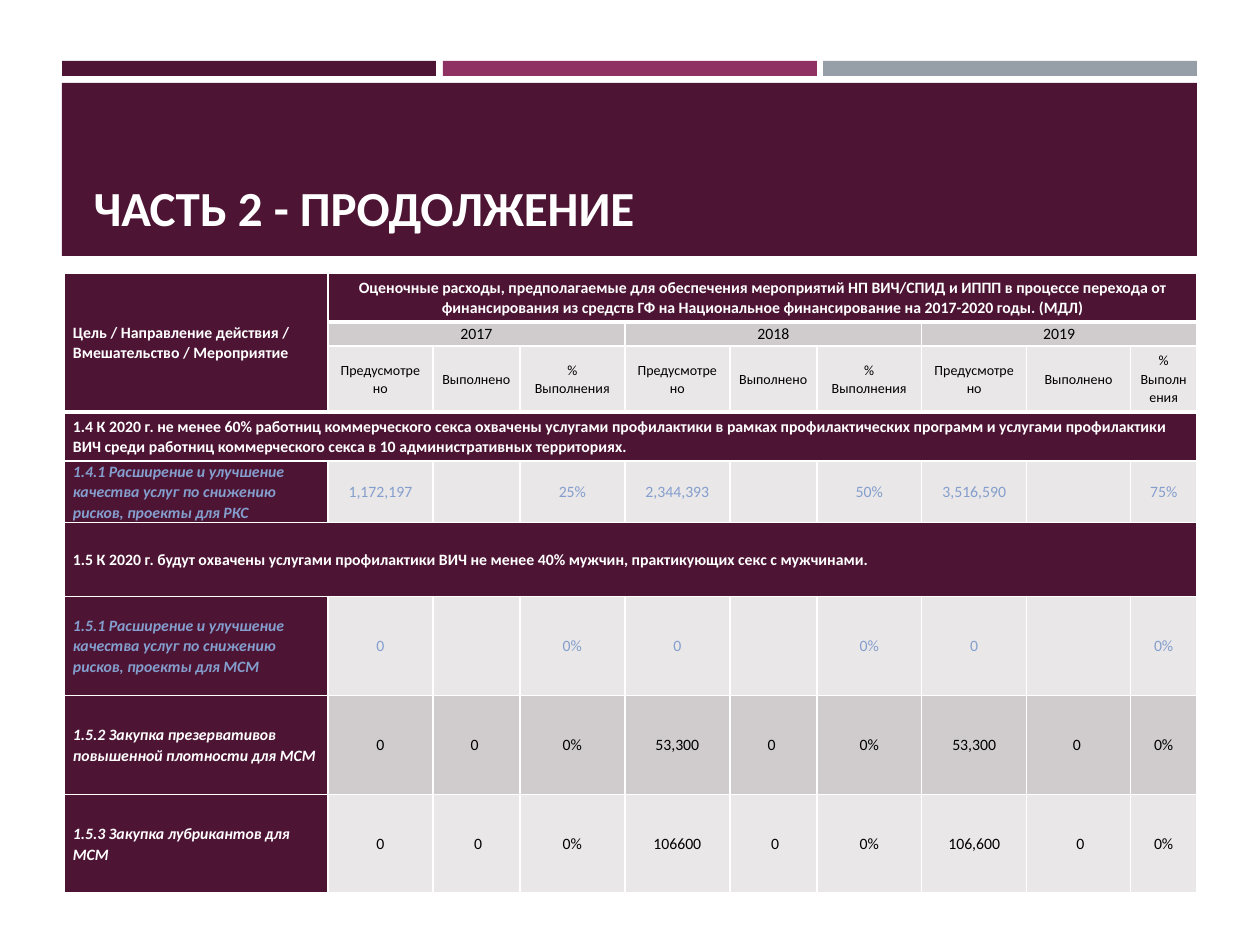
from lxml import etree
from pptx import Presentation
from pptx import util as u
from pptx.dml.color import RGBColor
from pptx.enum import shapes, text
from pptx.oxml import ns

PX = u.Inches(1) / 126
FONT = "Calibri"
PLUM = RGBColor(0x4D, 0x14, 0x34)
MAGENTA = RGBColor(0x90, 0x31, 0x63)
STEEL = RGBColor(0x96, 0x9F, 0xA7)
WHITE = RGBColor(0xFF, 0xFF, 0xFF)
BLACK = RGBColor(0, 0, 0)
BLUE = RGBColor(0x84, 0x9E, 0xCD)
GREY = RGBColor(0xD0, 0xCC, 0xCE)
PALE = RGBColor(0xE9, 0xE7, 0xE8)


def px(*lengths):
    """Turn pixel lengths into a list of EMU lengths."""
    return [u.Emu(round(length * PX)) for length in lengths]


def style_cell(cell, words, fill, color, size=9, bold=False, italic=False,
               centred=True, bottom=1):
    """Write and format one cell; bottom is its lower border in points."""
    cell.text = words
    cell.vertical_anchor = text.MSO_ANCHOR.MIDDLE
    cell.margin_left, cell.margin_right = px(9, 9)
    cell.margin_top = cell.margin_bottom = 0
    para = cell.text_frame.paragraphs[0]
    para.alignment = text.PP_ALIGN.CENTER if centred else text.PP_ALIGN.LEFT
    para.line_spacing = 1.07
    para.font.name, para.font.size = FONT, u.Pt(size)
    para.font.bold, para.font.italic = bold, italic
    para.font.color.rgb = color

    props = cell._tc.get_or_add_tcPr()
    for side, width in (("lnL", 1), ("lnR", 1), ("lnT", 1), ("lnB", bottom)):
        line = etree.SubElement(props, ns.qn(f"a:{side}"), w=str(u.Pt(width)))
        solid = etree.SubElement(line, ns.qn("a:solidFill"))
        etree.SubElement(solid, ns.qn("a:srgbClr"), val=str(WHITE))
    cell.fill.solid()
    cell.fill.fore_color.rgb = fill


deck = Presentation()
deck.slide_width, deck.slide_height = px(1260, 945)
page = deck.slides.add_slide(deck.slide_layouts[5])

# Bars and title band
for left, top, width, height, color in (
    (62, 61, 374, 15, PLUM),
    (443, 61, 374, 15, MAGENTA),
    (823, 61, 374, 15, STEEL),
    (62, 83, 1135, 173, PLUM),
):
    bar = page.shapes.add_shape(shapes.MSO_SHAPE.RECTANGLE, *px(left, top, width, height))
    bar.shadow.inherit = False
    bar.fill.solid()
    bar.fill.fore_color.rgb = color
    bar.line.fill.background()

title = page.shapes.title
title.element.getparent().append(title.element)  # in front of the band
title.left, title.top, title.width, title.height = px(81, 95, 1101, 148)
title.text_frame.text = "ЧАСТЬ 2 - ПРОДОЛЖЕНИЕ"
title.text_frame.auto_size = text.MSO_AUTO_SIZE.NONE
title.text_frame.vertical_anchor = text.MSO_ANCHOR.BOTTOM
para = title.text_frame.paragraphs[0]
para.alignment = text.PP_ALIGN.LEFT
para.font.name, para.font.size, para.font.bold = FONT, u.Pt(28), True
para.font.color.rgb = WHITE

# Table grid
column_widths = px(264, 105, 87, 105, 105, 87, 105, 105, 104, 66)
row_heights = px(49, 24, 66, 49, 58, 74, 99, 99, 99)
frame = page.shapes.add_table(len(row_heights), len(column_widths), *px(64, 273, 1133, 617))
table = frame.table
table.first_row = table.horz_banding = False
for column, width in zip(table.columns, column_widths):
    column.width = width
for row, height in zip(table.rows, row_heights):
    row.height = height

# Header
cost_heading = (
    "Оценочные расходы, предполагаемые для обеспечения мероприятий НП ВИЧ/СПИД и ИППП "
    "в процессе перехода от финансирования из средств ГФ на Национальное финансирование "
    "на 2017-2020 годы. (МДЛ)"
)
measures = ["Предусмотрено", "Выполнено", "% Выполнения"]
for row in range(3):
    words = "Цель / Направление действия / Вмешательство / Мероприятие" if row == 0 else ""
    style_cell(table.cell(row, 0), words, PLUM, WHITE, bold=True, centred=False, bottom=3)
for col in range(1, 10):
    year, measure = divmod(col - 1, 3)
    style_cell(table.cell(0, col), cost_heading if col == 1 else "", PLUM, WHITE,
               bold=True, bottom=3)
    style_cell(table.cell(1, col), str(2017 + year) if measure == 0 else "", GREY, BLACK)
    style_cell(table.cell(2, col), measures[measure], PALE, BLACK, size=8, bottom=3)
table.cell(0, 0).merge(table.cell(2, 0))
table.cell(0, 1).merge(table.cell(0, 9))
for col in (1, 4, 7):
    table.cell(1, col).merge(table.cell(1, col + 2))

# Goals across the full width
goals = {
    3: "1.4 К 2020 г. не менее 60% работниц коммерческого секса охвачены услугами "
       "профилактики в рамках профилактических программ и услугами профилактики ВИЧ среди "
       "работниц коммерческого секса в 10 административных территориях.",
    5: "1.5 К 2020 г. будут охвачены услугами профилактики ВИЧ не менее 40% мужчин, "
       "практикующих секс с мужчинами.",
}
for row, goal in goals.items():
    for col in range(10):
        style_cell(table.cell(row, col), goal if col == 0 else "", PLUM, WHITE,
                   bold=True, centred=False)
    table.cell(row, 0).merge(table.cell(row, 9))

# Activities: row, label, label colour, value colour, fill, values
activities = [
    (4, "1.4.1 Расширение и улучшение качества услуг по снижению рисков, проекты для РКС",
     BLUE, BLUE, PALE,
     ["1,172,197", "", "25%", "2,344,393", "", "50%", "3,516,590", "", "75%"]),
    (6, "1.5.1 Расширение и улучшение качества услуг по снижению рисков, проекты для МСМ",
     BLUE, BLUE, PALE, ["0", "", "0%"] * 3),
    (7, "1.5.2 Закупка презервативов повышенной плотности для МСМ",
     WHITE, BLACK, GREY,
     ["0", "0 ", "0%", "53,300", "0 ", "0%", "53,300", "0 ", "0%"]),
    (8, "1.5.3 Закупка лубрикантов для МСМ",
     WHITE, BLACK, PALE,
     ["0", " 0", "0%", "106600", " 0", "0%", "106,600", " 0", "0%"]),
]
for row, label, label_color, value_color, fill, values in activities:
    style_cell(table.cell(row, 0), label, PLUM, label_color, bold=True, italic=True,
               centred=False)
    for col, value in enumerate(values, start=1):
        style_cell(table.cell(row, col), value, fill, value_color)

deck.save("out.pptx")
